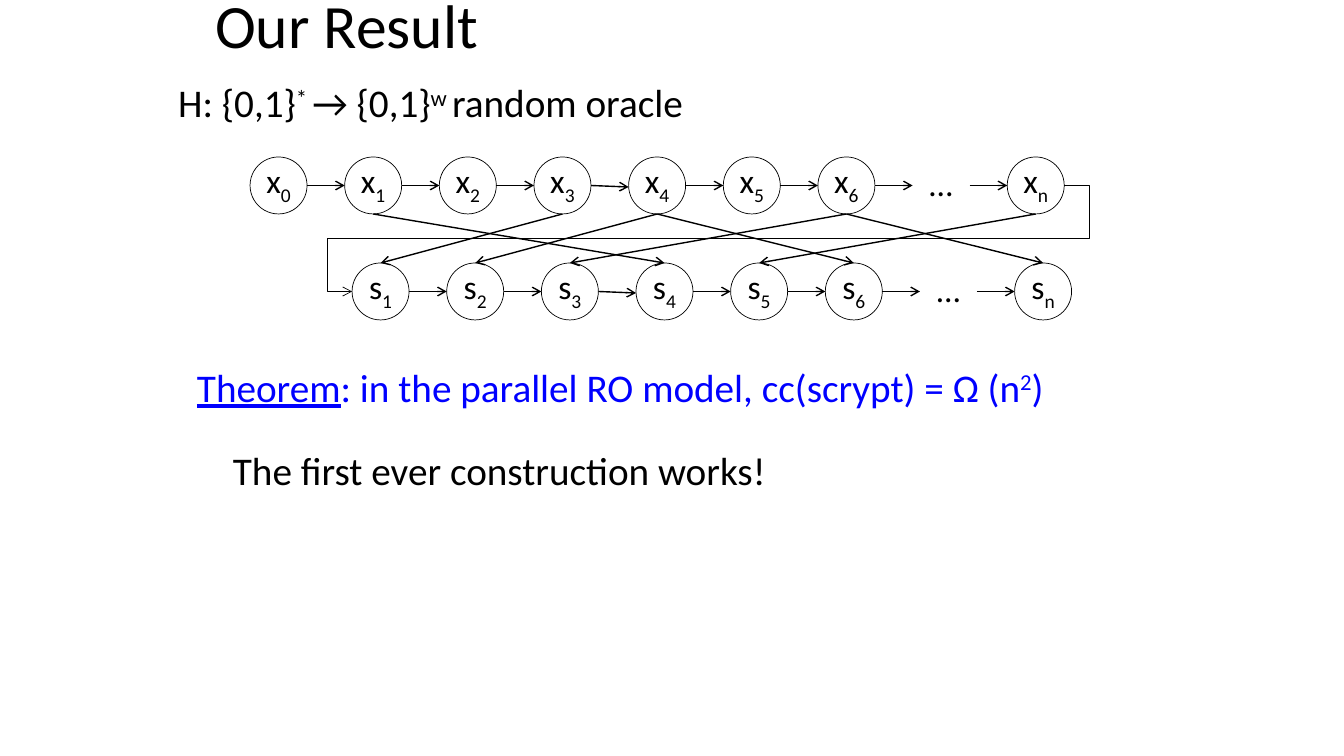
from lxml.etree import SubElement
from pptx import Presentation
from pptx.dml.color import RGBColor
from pptx.enum.shapes import MSO_CONNECTOR, MSO_SHAPE
from pptx.enum.text import MSO_ANCHOR, MSO_AUTO_SIZE, PP_ALIGN
from pptx.oxml.ns import qn
from pptx.util import Emu, Inches, Pt

# Content: spans are (text, baseline in percent, underlined)
TITLE = [("Our Result", 0, False)]
ORACLE = [("H: {0,1}", 0, False), ("* ", 30, False), ("→ {0,1}", 0, False),
          ("w ", 30, False), ("random oracle", 0, False)]
THEOREM = [("Theorem", 0, True),
           (": in the parallel RO model, cc(scrypt) = Ω (n", 0, False),
           ("2", 30, False), (")", 0, False)]
REMARK = [("The first ever construction works!", 0, False)]

# Chains: letter, subscripts, left and top in px
CHAINS = [("x", ["0", "1", "2", "3", "4", "5", "6", "…", "n"], 250, 157),
          ("s", ["1", "2", "3", "4", "5", "6", "…", "n"], 352, 263)]
LOOKUPS = [("x3", "s1"), ("x4", "s2"), ("x6", "s3"), ("x1", "s4"),
           ("xn", "s5"), ("x4", "s6"), ("x6", "sn")]
DIAMETER, PITCH = 57, 757 / 8
BLACK, BLUE = "000000", "0000FF"
FONT = "Calibri"


def px(length):
    return Emu(round(length * 914400 / 100.8))


def color(value):
    return RGBColor.from_string(value)


def place(box, left, top, width, height):
    box.left, box.top, box.width, box.height = map(px, (left, top, width, height))


def write(box, spans, size=28, fill=BLACK, align=PP_ALIGN.LEFT, spacing=None,
          anchor=MSO_ANCHOR.TOP, wrap=True):
    frame = box.text_frame
    frame.word_wrap = wrap
    frame.auto_size = MSO_AUTO_SIZE.NONE
    frame.vertical_anchor = anchor
    para = frame.paragraphs[0]
    para.alignment = align
    para.space_before = Pt(0)
    if spacing:
        para.line_spacing = spacing
    for text, baseline, underlined in spans:
        span = para.add_run()
        span.text = text
        font = span.font
        font.name, font.size, font.color.rgb = FONT, Pt(size), color(fill)
        if underlined:
            font.underline = True
        if baseline:
            span._r.get_or_add_rPr().set("baseline", str(baseline * 1000))
    return para


def arrow(start, end, kind=MSO_CONNECTOR.STRAIGHT, weight=1):
    link = page.shapes.add_connector(kind, *map(px, start + end))
    link.line.color.rgb = color(BLACK)
    link.line.width = Pt(weight)
    SubElement(link.line._get_or_add_ln(), qn("a:tailEnd"), type="arrow")
    SubElement(link._element.spPr, qn("a:effectLst"))
    return link


def add_node(letter, label, left, top):
    node = page.shapes.add_shape(MSO_SHAPE.OVAL, px(left), px(top),
                                 px(DIAMETER), px(DIAMETER))
    node.shadow.inherit = False
    node.fill.background()
    if label == "…":
        node.line.fill.background()
        spans = [(label, 0, False)]
    else:
        node.line.color.rgb = color(BLACK)
        node.line.width = Pt(0.5)
        spans = [(letter, 0, False), (label, -25, False)]
    write(node, spans, size=24, align=PP_ALIGN.CENTER,
          anchor=MSO_ANCHOR.MIDDLE, wrap=False)
    frame = node.text_frame
    frame.margin_left = frame.margin_right = Inches(0.1)
    frame.margin_top, frame.margin_bottom = 0, Inches(0.05)


deck = Presentation()
deck.slide_width, deck.slide_height = Inches(13.33), Inches(7.5)
page = deck.slides.add_slide(deck.slide_layouts[1])

# Title and oracle definition
title, body = page.shapes.title, page.placeholders[1]
place(title, 205, -34, 958, 126)
write(title, TITLE, size=44, spacing=0.9, anchor=MSO_ANCHOR.MIDDLE)
place(body, 168, 79, 673, 73)
oracle = write(body, ORACLE, spacing=0.9)
properties = oracle._p.get_or_add_pPr()
properties.set("marL", "0")
properties.set("indent", "0")
SubElement(properties, qn("a:buNone"))

# Two chains of nodes with arrows between neighbours
corners = {}
for letter, labels, first, top in CHAINS:
    middle = top + DIAMETER / 2
    for column, label in enumerate(labels):
        left = first + column * PITCH
        corners[letter + label] = (left, top)
        if column:
            drop = 1.5 if label == "4" else 0
            arrow((left - PITCH + DIAMETER, middle), (left, middle + drop))
        add_node(letter, label, left, top)

# Lookups from the upper chain into the lower one
for source, target in LOOKUPS:
    (source_left, source_top), (target_left, target_top) = corners[source], corners[target]
    arrow((source_left + DIAMETER / 2, source_top + DIAMETER),
          (target_left + DIAMETER / 2, target_top))

# Bent link from the last x to the first s
(last_left, last_top), (first_left, first_top) = corners["xn"], corners["s1"]
bent = arrow((last_left + DIAMETER, last_top + DIAMETER / 2),
             (first_left, first_top + DIAMETER / 2), MSO_CONNECTOR.ELBOW, 0.5)
geometry = bent._element.spPr.find(qn("a:prstGeom"))
geometry.set("prst", "bentConnector5")
guides = geometry.find(qn("a:avLst"))
for number, share in enumerate((-3500, 50000, 103500), start=1):
    SubElement(guides, qn("a:gd"), name=f"adj{number}", fmla=f"val {share}")

# Theorem and remark
for spans, fill, left, top, width in [(THEOREM, BLUE, 187, 358, 890),
                                      (REMARK, BLACK, 223, 441, 562)]:
    box = page.shapes.add_textbox(px(left), px(top), px(width), px(57))
    write(box, spans, fill=fill, wrap=False)

deck.save("out.pptx")
